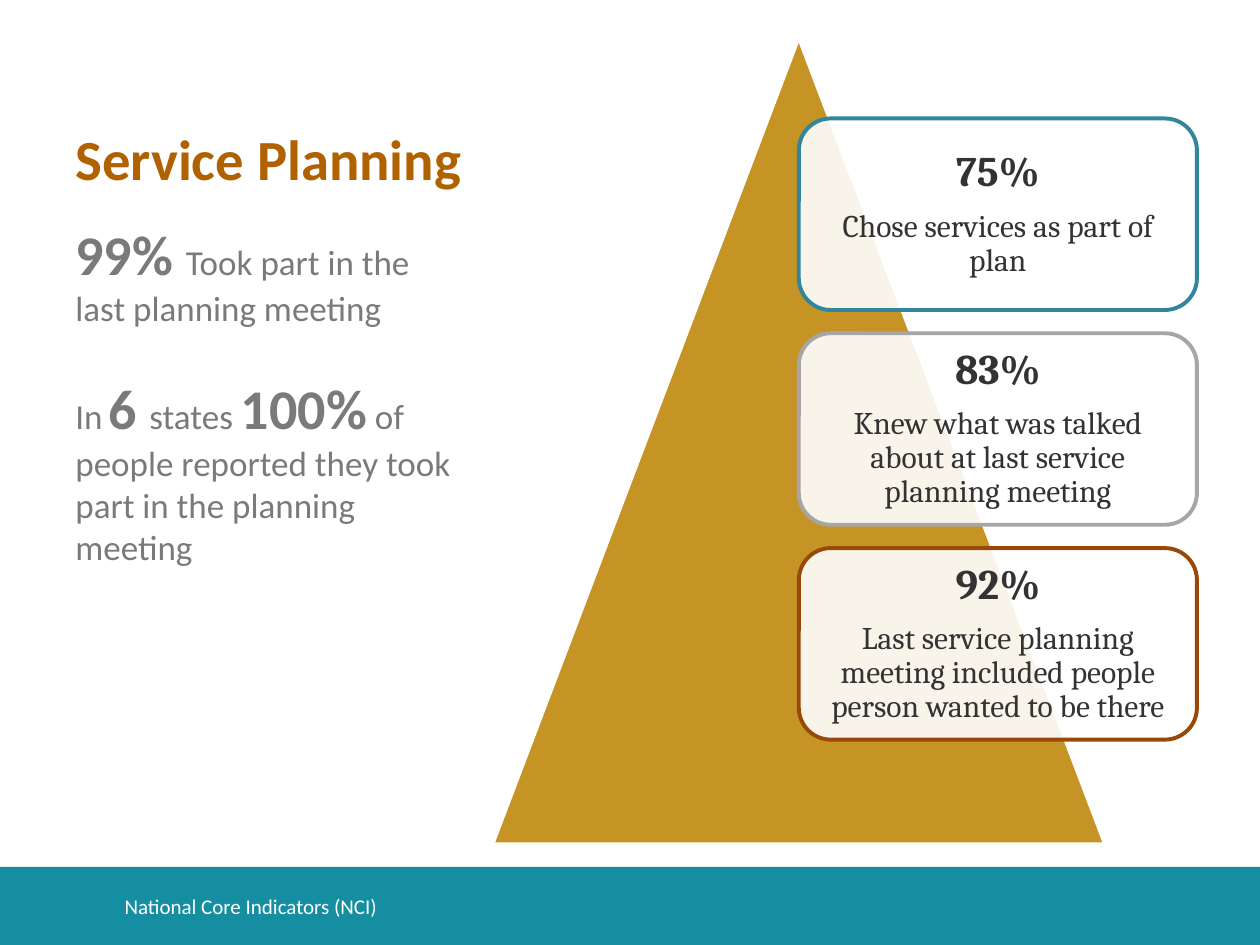
from dataclasses import dataclass
from lxml import etree
from pptx import Presentation
from pptx import util as u
from pptx.dml import color
from pptx.enum import shapes, text
from pptx.oxml import ns


@dataclass(frozen=True)
class Theme:
    sans: str = "Calibri"
    serif: str = "Cambria"
    white: str = "FFFFFF"
    teal: str = "168EA2"
    gold: str = "C69325"
    head: str = "B06100"
    gray: str = "7A7A7A"
    dark: str = "333333"
    edges: tuple = ("31859C", "A6A6A6", "984807")
    title: float = 32.4
    big: float = 32
    body: float = 20
    gap: float = 14
    foot: float = 12
    stat: float = 24
    note: float = 18


T = Theme()
KIND = shapes.MSO_SHAPE
ANCHOR = text.MSO_ANCHOR


def rgb(code):
    return color.RGBColor.from_string(code)


def apply(item, form):
    for name, value in form.items():
        setattr(item, name, value)


def put_run(para, words, size, bold, face, tint):
    run = para.add_run()
    run.text = words
    apply(run.font, dict(size=u.Pt(size), bold=bold, name=face))
    run.font.color.rgb = rgb(tint)


def fill_text(frame, paras, face, tint, form, style):
    apply(frame, dict(word_wrap=True, **form))
    for num, runs in enumerate(paras):
        para = frame.add_paragraph() if num else frame.paragraphs[0]
        apply(para, style)
        if num == 0:
            para.space_before = u.Pt(0)
        for words, size, bold in runs:
            put_run(para, words, size, bold, face, tint)


def add_text(slide, box, paras, tint, form, style):
    label = slide.shapes.add_textbox(*map(u.Inches, box))
    fill_text(label.text_frame, paras, T.sans, tint, form, style)


def add_block(slide, kind, box, fill, line=None, width=0):
    block = slide.shapes.add_shape(kind, *map(u.Inches, box))
    block.shadow.inherit = False
    block.fill.solid()
    block.fill.fore_color.rgb = rgb(fill)
    if line:
        block.line.color.rgb = rgb(line)
        block.line.width = u.Pt(width)
    else:
        block.line.fill.background()
    return block


def add_card(slide, top, stat, note, edge):
    box = (6.34, top, 3.16, 1.52)
    card = add_block(slide, KIND.ROUNDED_RECTANGLE, box, T.white, edge, 2.25)
    tone = card.fill._xPr.find(".//" + ns.qn("a:srgbClr"))
    etree.SubElement(tone, ns.qn("a:alpha"), val="90000")
    pad = u.Inches(0.1)
    form = dict(vertical_anchor=ANCHOR.MIDDLE, margin_left=pad,
                margin_right=pad, margin_top=pad, margin_bottom=pad)
    style = dict(alignment=text.PP_ALIGN.CENTER, line_spacing=0.9,
                 space_after=u.Pt(8))
    paras = [[(stat, T.stat, True)], [(note, T.note, False)]]
    fill_text(card.text_frame, paras, T.serif, T.dark, form, style)


def main():
    deck = Presentation()
    apply(deck, dict(slide_width=u.Inches(10), slide_height=u.Inches(7.5)))
    slide = deck.slides.add_slide(deck.slide_layouts[6])

    add_block(slide, KIND.RECTANGLE, (0, 6.88, 10, 0.62), T.teal)
    add_text(slide, (0.5, 0.3, 3.29, 1.27),
             [[("Service Planning", T.title, True)]], T.head,
             dict(vertical_anchor=ANCHOR.BOTTOM), {})
    facts = [
        [("99% ", T.big, True),
         ("Took part in the last planning meeting", T.body, False)],
        [("In", T.body, False), (" ", T.gap, False), ("6 ", T.big, True),
         ("states ", T.body, False), ("100%", T.big, True),
         (" of people reported they took part in the planning meeting",
          T.body, False)],
    ]
    add_text(slide, (0.5, 1.69, 3.29, 5.01), facts, T.gray,
             dict(vertical_anchor=ANCHOR.TOP), dict(space_before=u.Pt(26)))
    add_text(slide, (0.89, 6.99, 7.4, 0.4),
             [[("National Core Indicators (NCI)", T.foot, False)]], T.white,
             dict(vertical_anchor=ANCHOR.MIDDLE), {})

    add_block(slide, KIND.ISOSCELES_TRIANGLE, (3.91, 0.3, 4.86, 6.4),
              T.gold, T.white, 2)
    cards = [
        ("75%", "Chose services as part of plan"),
        ("83%", "Knew what was talked about at last service planning meeting"),
        ("92%", "Last service planning meeting included people person "
                "wanted to be there"),
    ]
    for num, ((stat, note), edge) in enumerate(zip(cards, T.edges)):
        add_card(slide, 0.94 + 1.705 * num, stat, note, edge)

    deck.save("out.pptx")


if __name__ == "__main__":
    main()
